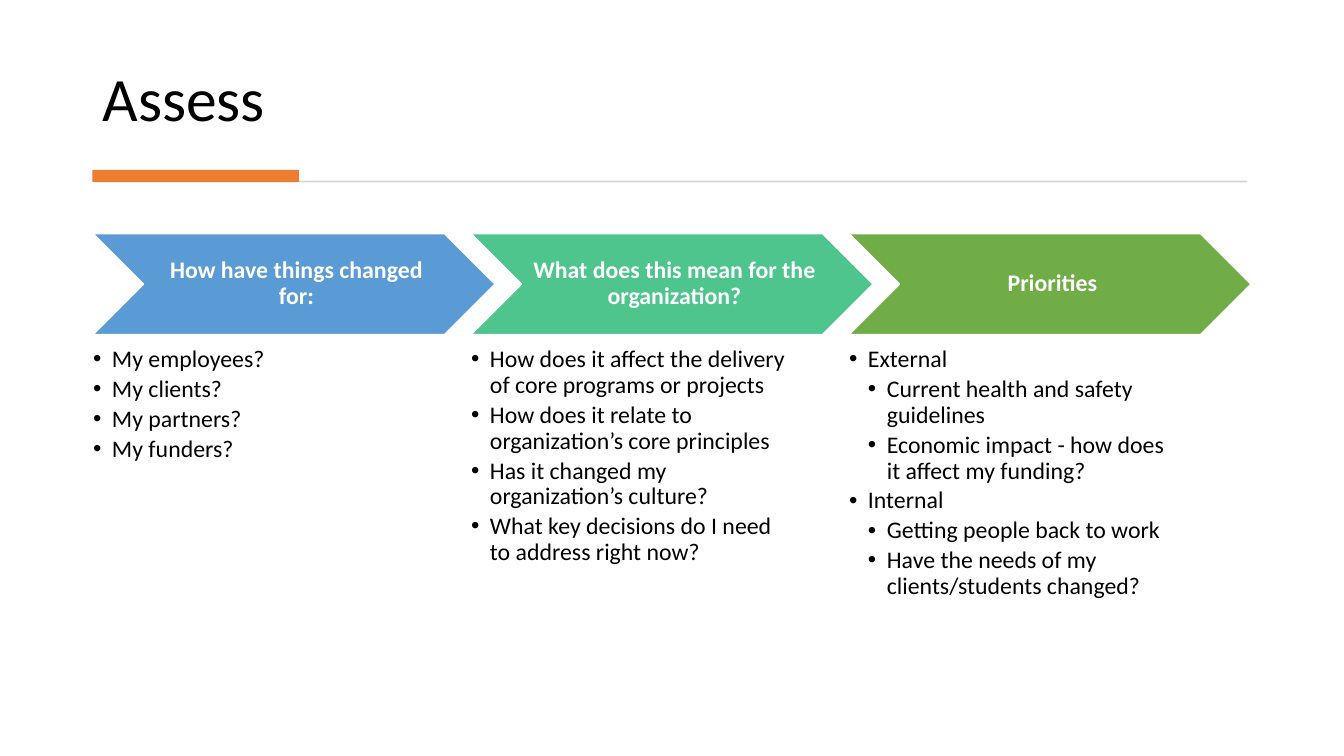
from lxml import etree
from pptx import Presentation
from pptx.dml.color import RGBColor
from pptx.enum.shapes import MSO_SHAPE
from pptx.enum.text import MSO_ANCHOR, PP_ALIGN
from pptx.oxml.ns import qn
from pptx.util import Pt

RECT, CHEVRON = MSO_SHAPE.RECTANGLE, MSO_SHAPE.CHEVRON
TOP, MIDDLE, BOTTOM = MSO_ANCHOR.TOP, MSO_ANCHOR.MIDDLE, MSO_ANCHOR.BOTTOM
LEFT, CENTER = PP_ALIGN.LEFT, PP_ALIGN.CENTER

FONT = "Calibri"
BLACK, WHITE, ORANGE, GREY = "000000", "FFFFFF", "ED7D31", "D5D5D5"
TITLE_SIZE, BODY_SIZE = 44, 17
INDENT = 13.5

# Heading, chevron colour, bullets as (level, text)
STAGES = [
    ("How have things changed for:", "5B9BD5", [
        (0, "My employees?"),
        (0, "My clients?"),
        (0, "My partners?"),
        (0, "My funders?"),
    ]),
    ("What does this mean for the organization?", "4DC58D", [
        (0, "How does it affect the delivery of core programs or projects"),
        (0, "How does it relate to organization’s core principles"),
        (0, "Has it changed my organization’s culture?"),
        (0, "What key decisions do I need to address right now?"),
    ]),
    ("Priorities", "70AD47", [
        (0, "External"),
        (1, "Current health and safety guidelines"),
        (1, "Economic impact - how does it affect my funding?"),
        (0, "Internal"),
        (1, "Getting people back to work"),
        (1, "Have the needs of my clients/students changed?"),
    ]),
]


def rgb(value):
    return RGBColor.from_string(value)


def set_frame(tf, anchor, insets):
    tf.word_wrap = True
    tf.vertical_anchor = anchor
    tf.margin_left, tf.margin_top, tf.margin_right, tf.margin_bottom = map(Pt, insets)


def write(p, text, size=BODY_SIZE, color=BLACK, bold=False, align=LEFT, after=0):
    p.alignment = align
    p.line_spacing = 0.9
    p.space_before, p.space_after = Pt(0), Pt(after)
    r = p.add_run()
    r.text = text
    r.font.name, r.font.size, r.font.bold = FONT, Pt(size), bold
    r.font.color.rgb = rgb(color)


def add_bullet(p, level):
    p.level = level
    pPr = p._p.get_or_add_pPr()
    pPr.set("marL", str(Pt(INDENT * (level + 1))))
    pPr.set("indent", str(Pt(-INDENT)))
    etree.SubElement(pPr, qn("a:buFont")).set("typeface", "Arial")
    etree.SubElement(pPr, qn("a:buChar")).set("char", "•")


def add_block(s, kind, x, y, w, h, fill, line=None):
    sp = s.shapes.add_shape(kind, Pt(x), Pt(y), Pt(w), Pt(h))
    sp.shadow.inherit = False
    sp.fill.solid()
    sp.fill.fore_color.rgb = rgb(fill)
    if line:
        sp.line.color.rgb = rgb(line)
        sp.line.width = Pt(1)
    else:
        sp.line.fill.background()
    return sp


def add_header(s, x, y, w, h, title):
    # Title
    sp = s.shapes.title
    sp.left, sp.top, sp.width, sp.height = Pt(x), Pt(y), Pt(w), Pt(h)
    set_frame(sp.text_frame, BOTTOM, (7.2, 3.6, 7.2, 3.6))
    write(sp.text_frame.paragraphs[0], title, size=TITLE_SIZE)
    # Thin rule with an accent bar at its left end
    rule_y = y + h + 29
    add_block(s, RECT, x + 2, rule_y, w - 4.5, 1.3, GREY)
    add_block(s, RECT, x, rule_y - 7.7, 147.5, 8.7, ORANGE)


def add_stage(s, x, y, w, h, heading, color, bullets):
    # Chevron with its heading
    chevron_h = 72
    sp = add_block(s, CHEVRON, x, y, w, chevron_h, color, line=WHITE)
    set_frame(sp.text_frame, MIDDLE, (5, 1.5, 1.5, 1.5))
    write(sp.text_frame.paragraphs[0], heading, color=WHITE, bold=True, align=CENTER)
    # Bullets below it
    gap = 9
    box = s.shapes.add_textbox(Pt(x), Pt(y + chevron_h + gap),
                               Pt(w * 0.8), Pt(h - chevron_h - gap))
    tf = box.text_frame
    set_frame(tf, TOP, (0, 0, 0, 0))
    for i, (level, text) in enumerate(bullets):
        p = tf.add_paragraph() if i else tf.paragraphs[0]
        write(p, text, after=3)
        add_bullet(p, level)


def add_process(s, x, y, w, h, stages):
    stage_w = 287
    step = (w - stage_w) / (len(stages) - 1)
    for i, stage in enumerate(stages):
        add_stage(s, x + i * step, y, stage_w, h, *stage)


def main():
    prs = Presentation()
    prs.slide_width, prs.slide_height = Pt(960), Pt(540)
    s = prs.slides.add_slide(prs.slide_layouts[5])
    add_header(s, 66, 20, 827.5, 80, "Assess")
    add_process(s, 66.5, 167, 827, 312.5, STAGES)
    prs.save("out.pptx")


if __name__ == "__main__":
    main()
